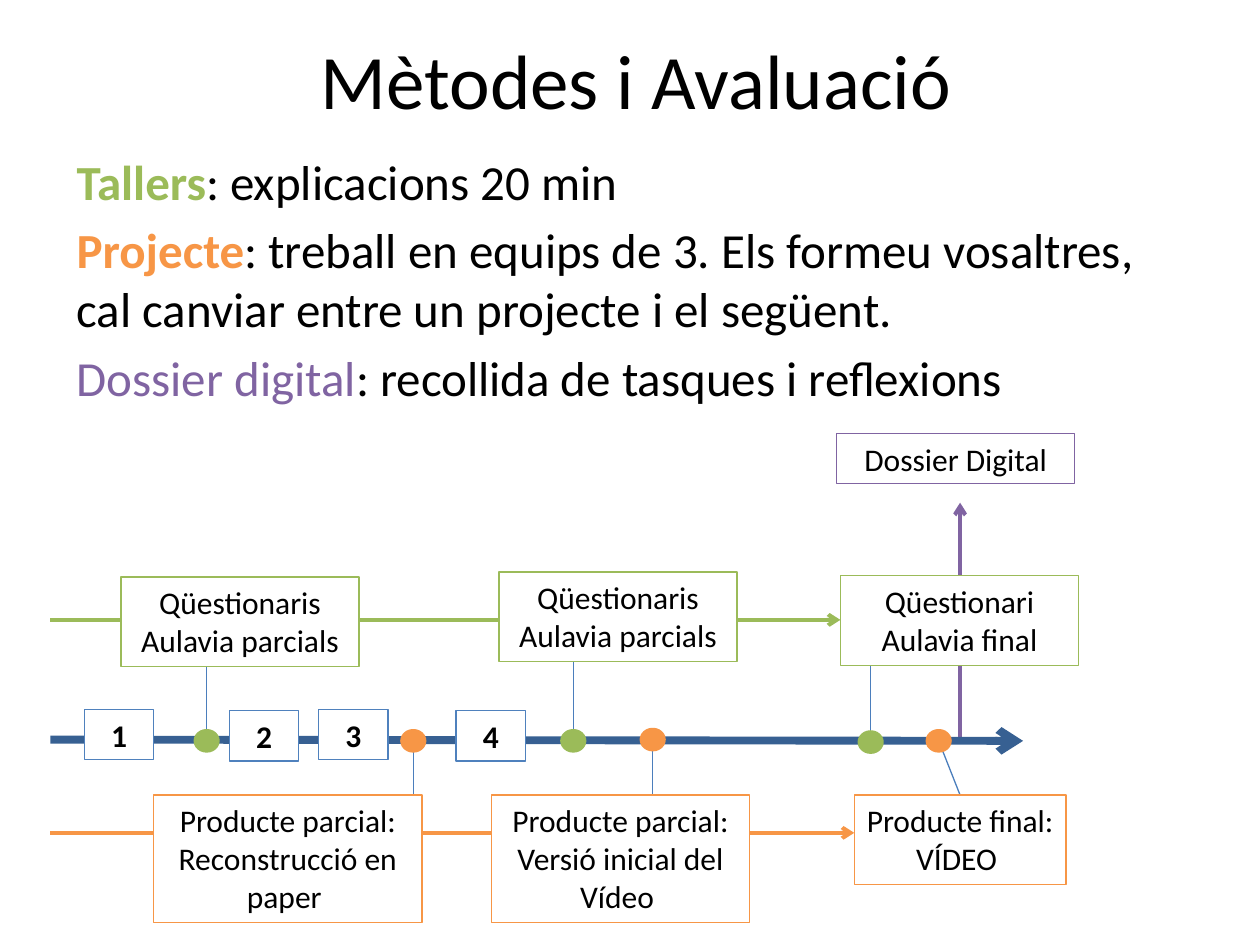
from lxml.etree import SubElement
from pptx import Presentation
from pptx.dml.color import RGBColor
from pptx.enum.shapes import MSO_CONNECTOR as Connector, MSO_SHAPE as Shape
from pptx.enum.text import MSO_ANCHOR as Anchor, PP_ALIGN as Align
from pptx.oxml.ns import qn
from pptx.util import Inches, Pt

COLORS = {
    "black": "000000", "white": "FFFFFF", "green": "9BBB59", "orange": "F79646",
    "purple": "8064A2", "navy": "376092", "blue": "4F81BD", "tick": "4B7EBC",
}
FONT = "Calibri"

TITLE = "Mètodes i Avaluació"
# Term, colour, bold, explanation
METHODS = [
    ("Tallers", "green", True, ": explicacions 20 min"),
    ("Projecte", "orange", True, ": treball en equips de 3. Els formeu vosaltres, "
     "cal canviar entre un projecte i el següent."),
    ("Dossier digital", "purple", False, ": recollida de tasques i reflexions"),
]
# Start, end, colour, line width
ARROWS = [
    ((7.62, 5.88), (7.62, 3.99), "purple", 2.25),
    ((0.4, 6.61), (6.78, 6.61), "orange", 2.25),
    ((0.4, 4.92), (6.67, 4.92), "green", 2.25),
    ((0.4, 5.87), (8.12, 5.88), "navy", 4.5),
]
# Milestones on the timeline: centre, colour, far end of the tick
MILESTONES = [
    ((1.64, 5.88), "green", (1.64, 4.94)),
    ((3.28, 5.88), "orange", (3.28, 6.3)),
    ((4.55, 5.88), "green", (4.55, 5.25)),
    ((5.18, 5.87), "orange", (5.18, 6.31)),
    ((6.91, 5.89), "green", (6.91, 5.27)),
    ((7.45, 5.88), "orange", (7.62, 6.31)),
]
DOT_SIZE = (0.18, 0.16)
# Left, top, width, height, colour, paragraphs
BOXES = [
    (0.96, 4.58, 1.89, 0.71, "green", ["Qüestionaris Aulavia parcials"]),
    (3.96, 4.54, 1.89, 0.71, "green", ["Qüestionaris Aulavia parcials"]),
    (6.67, 4.57, 1.89, 0.71, "green", ["Qüestionari", "Aulavia final"]),
    (1.22, 6.31, 2.13, 1.01, "orange", ["Producte parcial: Reconstrucció en paper "]),
    (3.9, 6.31, 2.05, 1.01, "orange", ["Producte parcial: Versió inicial del Vídeo "]),
    (6.78, 6.31, 1.68, 0.71, "orange", ["Producte final: VÍDEO "]),
    (6.64, 3.44, 1.89, 0.4, "purple", ["Dossier Digital"]),
]
# Left and top of sessions 1 to 4
SESSIONS = [(0.67, 5.63), (1.82, 5.64), (2.53, 5.63), (3.62, 5.64)]
SESSION_SIZE = (0.55, 0.4)


def color(name):
    return RGBColor.from_string(COLORS[name])


def add_text(para, text, size=18, tint="black", bold=False, align=None):
    span = para.add_run()
    span.text = text
    span.font.name = FONT
    span.font.size = Pt(size)
    span.font.bold = bold
    span.font.color.rgb = color(tint)
    if align is not None:
        para.alignment = align


def add_line(page, start, end, tint, width, arrow=False):
    line = page.shapes.add_connector(
        Connector.STRAIGHT, *(Inches(value) for value in (*start, *end)))
    line.line.color.rgb = color(tint)
    line.line.width = Pt(width)
    if arrow:
        SubElement(line.line._get_or_add_ln(), qn("a:tailEnd"), type="arrow")
    SubElement(line._element.spPr, qn("a:effectLst"))


def add_shape(page, kind, area, fill, outline, width):
    shape = page.shapes.add_shape(kind, *(Inches(value) for value in area))
    shape.shadow.inherit = False
    shape.fill.solid()
    shape.fill.fore_color.rgb = color(fill)
    shape.line.color.rgb = color(outline)
    shape.line.width = Pt(width)
    return shape


def add_box(page, area, outline, lines, bold=False):
    frame = add_shape(page, Shape.RECTANGLE, area, "white", outline, 0.75).text_frame
    frame.word_wrap = True
    frame.vertical_anchor = Anchor.TOP
    for index, text in enumerate(lines):
        para = frame.add_paragraph() if index else frame.paragraphs[0]
        add_text(para, text, bold=bold, align=Align.CENTER)


def main():
    deck = Presentation()
    deck.slide_width, deck.slide_height = Inches(10), Inches(7.5)
    page = deck.slides.add_slide(deck.slide_layouts[5])

    # Title
    title = page.shapes.title
    title.left, title.top = Inches(0.55), Inches(0)
    title.width, title.height = Inches(9), Inches(1.25)
    title.text_frame.vertical_anchor = Anchor.MIDDLE
    add_text(title.text_frame.paragraphs[0], TITLE, size=44, align=Align.CENTER)

    # Methods
    body = page.shapes.add_textbox(Inches(0.51), Inches(1.15), Inches(9), Inches(3.18))
    body.text_frame.word_wrap = True
    for index, (term, tint, bold, explanation) in enumerate(METHODS):
        para = body.text_frame.add_paragraph() if index else body.text_frame.paragraphs[0]
        para.space_before = Pt(5.6)
        add_text(para, term, size=28, tint=tint, bold=bold)
        add_text(para, explanation, size=28)

    # Arrows and ticks, behind the boxes
    for start, end, tint, width in ARROWS:
        add_line(page, start, end, tint, width, arrow=True)
    for center, _, far_end in MILESTONES:
        add_line(page, far_end, center, "tick", 0.75)

    # Labelled boxes
    for *area, tint, lines in BOXES:
        add_box(page, area, tint, lines)

    # Milestone dots and numbered sessions
    dot_width, dot_height = DOT_SIZE
    for (x, y), tint, _ in MILESTONES:
        area = (x - dot_width / 2, y - dot_height / 2, dot_width, dot_height)
        add_shape(page, Shape.OVAL, area, tint, tint, 2)
    for number, corner in enumerate(SESSIONS, 1):
        add_box(page, (*corner, *SESSION_SIZE), "blue", [str(number)], bold=True)

    deck.save("out.pptx")


if __name__ == "__main__":
    main()
